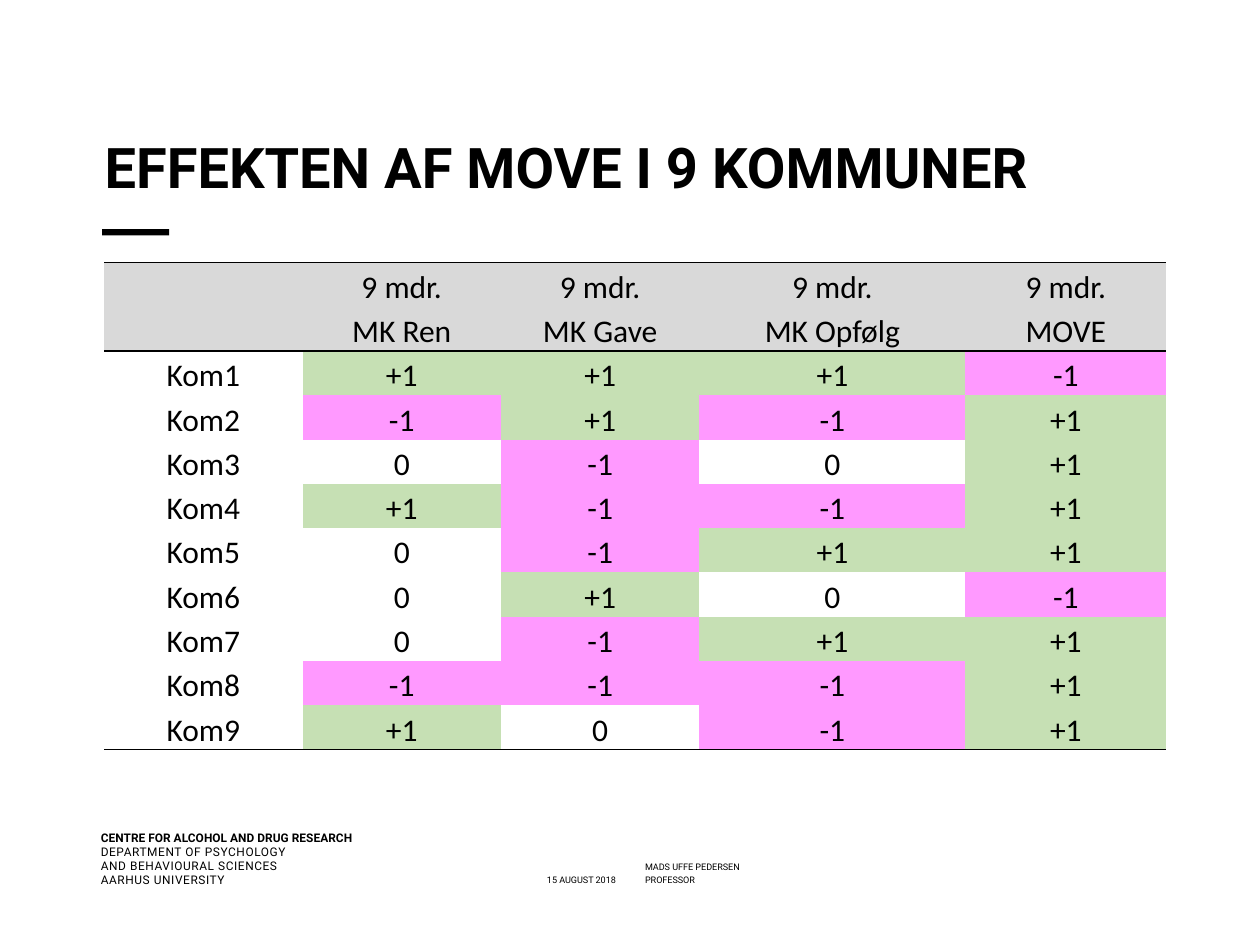
"""Build a slide that shows the effect of MOVE in nine municipalities."""
from lxml import etree
from pptx import Presentation
from pptx.dml.color import RGBColor
from pptx.enum.shapes import MSO_SHAPE
from pptx.enum.text import MSO_ANCHOR, MSO_AUTO_SIZE, PP_ALIGN
from pptx.oxml.ns import qn
from pptx.util import Pt

RECTANGLE = MSO_SHAPE.RECTANGLE
BOTTOM, TOP = MSO_ANCHOR.BOTTOM, MSO_ANCHOR.TOP
LEFT, CENTER, RIGHT = PP_ALIGN.LEFT, PP_ALIGN.CENTER, PP_ALIGN.RIGHT
NO_AUTOFIT = MSO_AUTO_SIZE.NONE
TITLE_ONLY = 5

COLORS = {
    "ink": "000000",
    "header": "D9D9D9",
    "neutral": "FFFFFF",
    "gain": "C6E0B4",
    "loss": "FF99FF",
}
EFFECT_COLORS = {"+1": "gain", "-1": "loss"}

HEADERS = [
    ["", "9 mdr.", "9 mdr.", "9 mdr.", "9 mdr."],
    ["", "MK Ren", "MK Gave", "MK Opfølg", "MOVE"],
]
EFFECTS = [
    ["+1", "+1", "+1", "-1"],
    ["-1", "+1", "-1", "+1"],
    ["0", "-1", "0", "+1"],
    ["+1", "-1", "-1", "+1"],
    ["0", "-1", "+1", "+1"],
    ["0", "+1", "0", "-1"],
    ["0", "-1", "+1", "+1"],
    ["-1", "-1", "-1", "+1"],
    ["+1", "0", "-1", "+1"],
]
COLUMN_WIDTHS = [113.4, 113.4, 113.4, 152, 114.8]
ROW_HEIGHT = 25.33
FOOTER_TOP = 472.3


def rgb(name):
    return RGBColor.from_string(COLORS[name])


def add_run(paragraph, text, size, font="Roboto", bold=False, tracking=None):
    run = paragraph.add_run()
    run.text = text
    run.font.size = Pt(size)
    run.font.name = font
    run.font.bold = bold
    run.font.color.rgb = rgb("ink")
    if tracking:
        run.font._element.set("spc", str(tracking))


def prepare_frame(frame, anchor, top_inset=0, wrap=True):
    frame.auto_size = NO_AUTOFIT
    frame.word_wrap = wrap
    frame.vertical_anchor = anchor
    frame.margin_left = frame.margin_right = frame.margin_bottom = 0
    frame.margin_top = Pt(top_inset)


def add_title(slide, text):
    title = slide.shapes.title
    title.left, title.top, title.width, title.height = Pt(59.8), Pt(11.5), Pt(641.5), Pt(103)
    prepare_frame(title.text_frame, BOTTOM)
    heading = title.text_frame.paragraphs[0]
    heading.alignment = LEFT
    heading.line_spacing = 0.89
    add_run(heading, text, 32, bold=True)


def add_accent(slide):
    accent = slide.shapes.add_shape(RECTANGLE, Pt(58.3), Pt(131), Pt(38.3), Pt(3.6))
    accent.shadow.inherit = False
    accent.fill.solid()
    accent.fill.fore_color.rgb = rgb("ink")
    accent.line.fill.background()


def add_footer(slide, lines, left, width, height, inset, size,
               align=LEFT, spacing=None, wrap=True, bold=False, tracking=None):
    footer = slide.shapes.add_textbox(Pt(left), Pt(FOOTER_TOP), Pt(width), Pt(height))
    prepare_frame(footer.text_frame, TOP, inset, wrap)
    paragraph = footer.text_frame.paragraphs[0]
    paragraph.alignment = align
    if spacing:
        paragraph.line_spacing = spacing
    for index, line in enumerate(lines):
        if index:
            paragraph.add_line_break()
        add_run(paragraph, line, size, bold=bold, tracking=tracking)


def set_borders(cell, ruled_edges):
    properties = cell._tc.get_or_add_tcPr()
    for edge in ("lnL", "lnR", "lnT", "lnB"):
        border = etree.SubElement(properties, qn(f"a:{edge}"), w=str(Pt(1)))
        if edge in ruled_edges:
            fill = etree.SubElement(border, qn("a:solidFill"))
            etree.SubElement(fill, qn("a:srgbClr"), val=COLORS["ink"])
        else:
            etree.SubElement(border, qn("a:noFill"))


def format_cell(cell, text, color, ruled_edges):
    set_borders(cell, ruled_edges)
    cell.fill.solid()
    cell.fill.fore_color.rgb = rgb(color)
    cell.vertical_anchor = BOTTOM
    cell.margin_left = cell.margin_right = Pt(3.6)
    cell.margin_top = cell.margin_bottom = 0
    paragraph = cell.text_frame.paragraphs[0]
    paragraph.alignment = CENTER
    paragraph.line_spacing = 1.07
    if text:
        add_run(paragraph, text, 18, font="Calibri")


def add_effect_table(slide):
    municipalities = [[f"Kom{number}", *effects] for number, effects in enumerate(EFFECTS, 1)]
    rows = HEADERS + municipalities
    frame = slide.shapes.add_table(
        len(rows), len(COLUMN_WIDTHS), Pt(59.5), Pt(149.9),
        Pt(sum(COLUMN_WIDTHS)), Pt(ROW_HEIGHT * len(rows)))
    table = frame.table
    table.first_row = table.horz_banding = False
    for column, width in zip(table.columns, COLUMN_WIDTHS):
        column.width = Pt(width)
    header_end = len(HEADERS)
    ruled = {0: ["lnT"], header_end - 1: ["lnB"], header_end: ["lnT"], len(rows) - 1: ["lnB"]}
    for row_index, values in enumerate(rows):
        table.rows[row_index].height = Pt(ROW_HEIGHT)
        for column_index, value in enumerate(values):
            color = "header" if row_index < header_end else EFFECT_COLORS.get(value, "neutral")
            format_cell(table.cell(row_index, column_index), value, color,
                        ruled.get(row_index, []))


def main():
    presentation = Presentation()
    presentation.slide_width, presentation.slide_height = Pt(720), Pt(540)
    slide = presentation.slides.add_slide(presentation.slide_layouts[TITLE_ONLY])
    add_accent(slide)
    add_footer(slide, ["MADS UFFE PEDERSEN"], 368.6, 176.4, 26.6, 20.2, 5.2, spacing=0.95)
    add_footer(slide, ["15 AUGUST 2018"], 218.2, 133.9, 34.6, 28.1, 5.2,
               align=RIGHT, spacing=0.95)
    add_footer(slide, ["PROFESSOR"], 368.6, 176.4, 34.6, 28.1, 5.2, spacing=0.95)
    add_footer(slide, ["DEPARTMENT OF PSYCHOLOGY", "AND BEHAVIOURAL SCIENCES", "AARHUS UNIVERSITY"],
               57.6, 139, 42.5, 10.1, 6.8, tracking=30)
    add_footer(slide, ["CENTRE FOR ALCOHOL AND DRUG RESEARCH"],
               57.6, 144.7, 18.7, 2.2, 6.8, wrap=False, bold=True)
    add_title(slide, "EFFEKTEN AF MOVE I 9 KOMMUNER")
    add_effect_table(slide)
    presentation.save("out.pptx")


if __name__ == "__main__":
    main()
